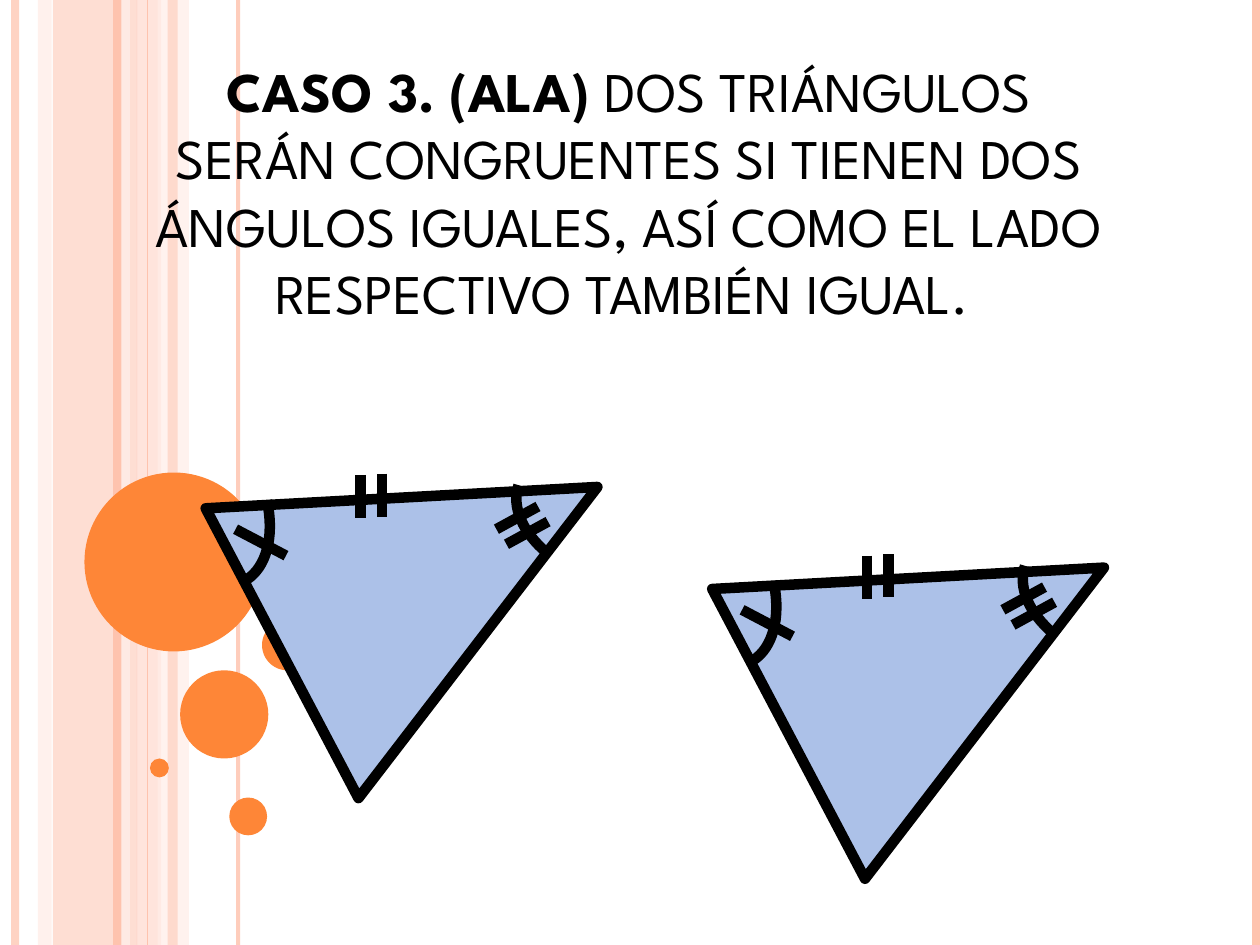
from typing import NamedTuple

from lxml import etree
from pptx import Presentation
from pptx.dml.color import RGBColor
from pptx.enum.shapes import MSO_CONNECTOR, MSO_SHAPE
from pptx.enum.text import MSO_ANCHOR, MSO_AUTO_SIZE, PP_ALIGN
from pptx.oxml.ns import qn
from pptx.util import Inches, Pt

RECTANGLE, ELLIPSE = MSO_SHAPE.RECTANGLE, MSO_SHAPE.OVAL
TRIANGLE, ARC = MSO_SHAPE.ISOSCELES_TRIANGLE, MSO_SHAPE.ARC
STRAIGHT = MSO_CONNECTOR.STRAIGHT

FONT = "League Spartan"
BLACK, ORANGE, BLUE = "000000", "FE8637", "ACC1E8"
PEACH, PINK, PALE = "FEC3AE", "FFD9CE", "FFEDE8"
SLIDE_WIDTH, SLIDE_HEIGHT = 10, 7.5
OUTLINE = 6


class Band(NamedTuple):
    left: float
    width: float
    color: str
    opacity: int


class Stripe(NamedTuple):
    x: float
    weight: float
    color: str
    opacity: int = 100


class Circle(NamedTuple):
    left: float
    top: float
    size: float


class AngleArc(NamedTuple):
    left: float
    top: float
    rotation: float
    start: float


class Tick(NamedTuple):
    x1: float
    y1: float
    x2: float
    y2: float


BANDS = [Band(0.42, 0.67, PEACH, 54), Band(0.3, 0.11, PINK, 36),
         Band(1.08, 0.2, PINK, 70), Band(1.25, 0.25, PALE, 71)]
STRIPES = [Stripe(0.12, 4.5, PEACH, 73), Stripe(1, 4.5, PALE, 83),
           Stripe(0.93, 4.5, PEACH), Stripe(1.89, 2.25, PEACH, 82),
           Stripe(1.17, 0.75, PEACH), Stripe(9.97, 4.5, PEACH)]
FRONT_BAND = Band(1.33, 0.08, PEACH, 51)
CIRCLES = [Circle(0.67, 3.75, 1.42), Circle(1.43, 5.32, 0.7),
           Circle(1.19, 6.02, 0.15), Circle(1.82, 6.33, 0.3),
           Circle(2.08, 4.92, 0.4)]

# Marks of the first triangle; the second one repeats them with an offset
ARCS = [AngleArc(0.73, 3.38, 62.2, 183.59), AngleArc(4.07, 3.61, 199.2, 188.96)]
TICKS = [Tick(1.87, 4.2, 2.27, 4.41),
         Tick(2.86, 3.77, 2.86, 4.11), Tick(3.03, 3.76, 3.03, 4.1),
         Tick(4.27, 4.02, 3.94, 4.2), Tick(4.35, 4.14, 4.02, 4.32)]
TRIANGLE_OFFSETS = [(0, 0), (4.02, 0.64)]

TITLE_RUNS = [
    ("CASO 3. (ALA) ", True),
    ("DOS TRIÁNGULOS SERÁN CONGRUENTES SI TIENEN DOS ÁNGULOS IGUALES, "
     "ASÍ COMO EL LADO RESPECTIVO TAMBIÉN IGUAL. ", False),
]


def paint(fill, color: str, opacity: int = 100) -> None:
    fill.solid()
    fill.fore_color.rgb = RGBColor.from_string(color)
    if opacity < 100:
        # Transparency is a child of the colour element
        for element in fill._xPr.iter(qn("a:srgbClr")):
            etree.SubElement(element, qn("a:alpha"), val=str(opacity * 1000))


def draw_shape(shapes, kind, left: float, top: float, width: float,
               height: float, color: str | None = None, opacity: int = 100):
    shape = shapes.add_shape(kind, Inches(left), Inches(top),
                             Inches(width), Inches(height))
    shape.shadow.inherit = False
    shape.line.fill.background()
    if color:
        paint(shape.fill, color, opacity)
    else:
        shape.fill.background()
    return shape


def outline(shape) -> None:
    paint(shape.line.fill, BLACK)
    shape.line.width = Pt(OUTLINE)
    etree.SubElement(shape.line._get_or_add_ln(), qn("a:round"))


def draw_line(shapes, x1: float, y1: float, x2: float, y2: float,
              weight: float, color: str, opacity: int = 100) -> None:
    line = shapes.add_connector(STRAIGHT, Inches(x1), Inches(y1),
                                Inches(x2), Inches(y2))
    paint(line.line.fill, color, opacity)
    line.line.width = Pt(weight)
    etree.SubElement(line._element.spPr, qn("a:effectLst"))


def draw_band(shapes, band: Band) -> None:
    draw_shape(shapes, RECTANGLE, band.left, 0, band.width, SLIDE_HEIGHT,
               band.color, band.opacity)


def draw_background(shapes) -> None:
    for band in BANDS:
        draw_band(shapes, band)
    for stripe in STRIPES:
        draw_line(shapes, stripe.x, 0, stripe.x, SLIDE_HEIGHT,
                  stripe.weight, stripe.color, stripe.opacity)
    draw_band(shapes, FRONT_BAND)
    for circle in CIRCLES:
        draw_shape(shapes, ELLIPSE, circle.left, circle.top,
                   circle.size, circle.size, ORANGE)


def write_title(slide) -> None:
    title = slide.shapes.title
    title.left, title.top = Inches(1.06), Inches(0.4)
    title.width, title.height = Inches(7.87), Inches(2.79)
    frame = title.text_frame
    frame.word_wrap = True
    frame.auto_size = MSO_AUTO_SIZE.SHAPE_TO_FIT_TEXT
    frame.vertical_anchor = MSO_ANCHOR.TOP
    para = frame.paragraphs[0]
    para.alignment = PP_ALIGN.CENTER
    for text, bold in TITLE_RUNS:
        span = para.add_run()
        span.text = text
        span.font.name = FONT
        span.font.size = Pt(32)
        span.font.bold = bold
        span.font.color.rgb = RGBColor.from_string(BLACK)
    # Bring the title in front of the background
    slide.shapes._spTree.append(title._element)


def draw_marked_triangle(slide, dx: float, dy: float) -> None:
    shapes = slide.shapes.add_group_shape().shapes
    triangle = draw_shape(shapes, TRIANGLE, 2.19 + dx, 3.11 + dy, 2.6, 2.83, BLUE)
    triangle.rotation = 62.2
    outline(triangle)
    for arc in ARCS:
        mark = draw_shape(shapes, ARC, arc.left + dx, arc.top + dy, 1.64, 1.02)
        mark.rotation = arc.rotation
        mark.adjustments[0] = arc.start
        mark.adjustments[1] = 0
        outline(mark)
    for tick in TICKS:
        draw_line(shapes, tick.x1 + dx, tick.y1 + dy, tick.x2 + dx,
                  tick.y2 + dy, OUTLINE, BLACK)


def main() -> None:
    deck = Presentation()
    deck.slide_width = Inches(SLIDE_WIDTH)
    deck.slide_height = Inches(SLIDE_HEIGHT)
    slide = deck.slides.add_slide(deck.slide_layouts[5])
    paint(slide.background.fill, "FFFFFF")
    draw_background(slide.shapes)
    write_title(slide)
    for dx, dy in TRIANGLE_OFFSETS:
        draw_marked_triangle(slide, dx, dy)
    deck.save("out.pptx")


if __name__ == "__main__":
    main()
